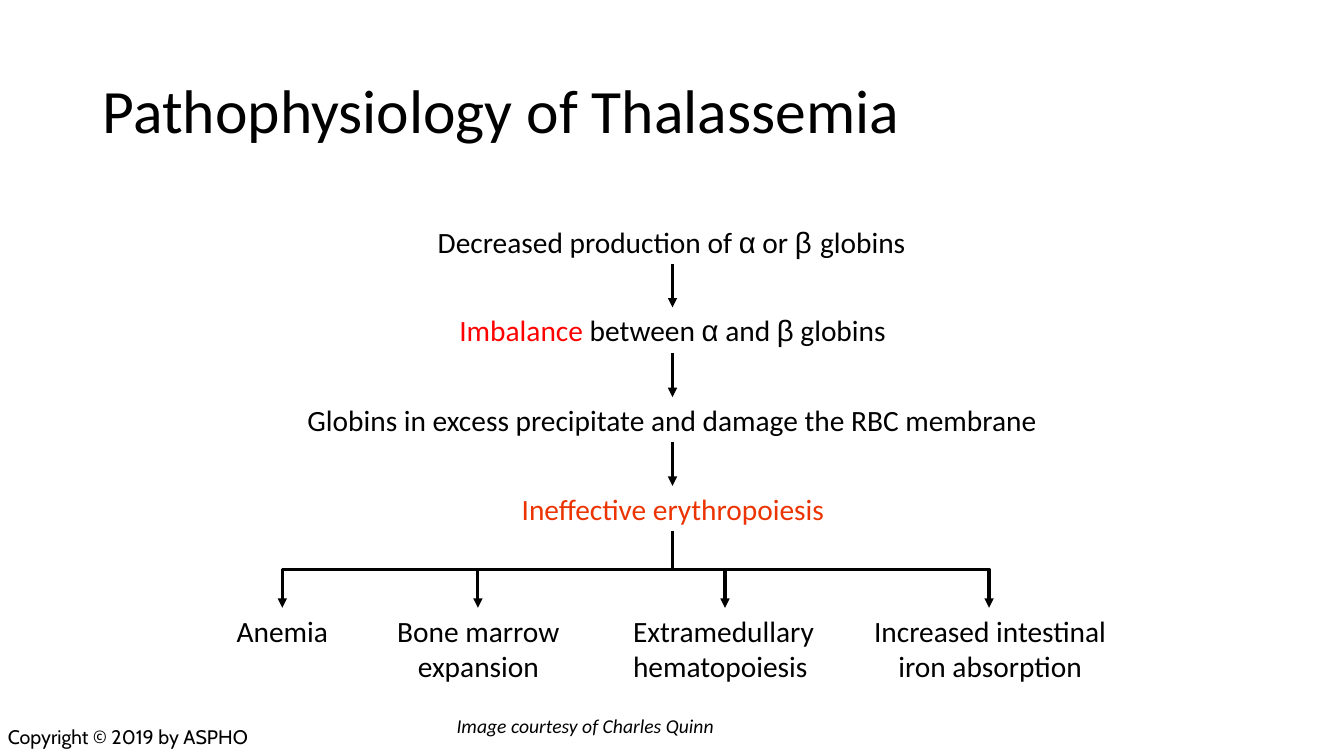
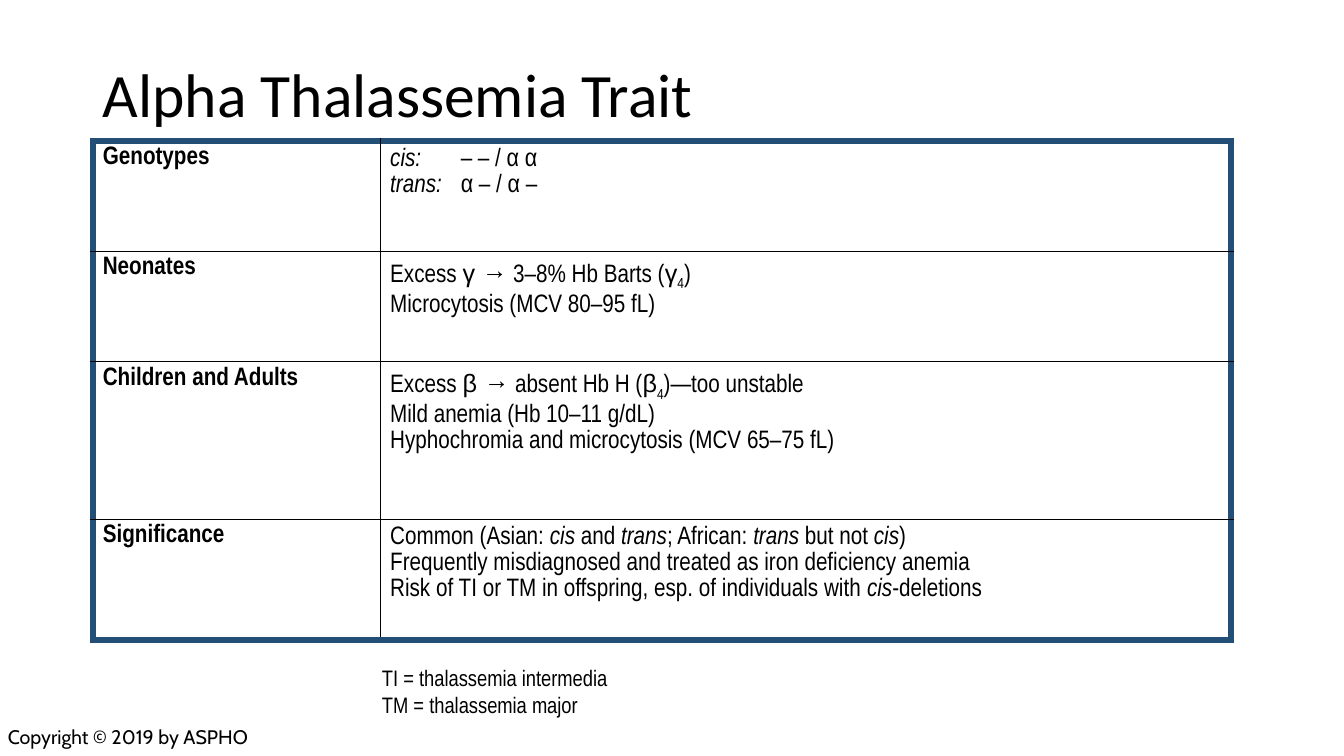
from dataclasses import dataclass
from typing import NamedTuple

from lxml import etree
from pptx import Presentation
from pptx.dml.color import RGBColor
from pptx.enum import shapes, text
from pptx.oxml import ns
from pptx.util import Inches, Pt

BLACK = "000000"
RED = "FF0000"
ORANGE = "EC3402"
NAVY = "234F77"
BODY_FONT = "Calibri"
GREEK_FONT = "Arial"
TABLE_FONT = "Arial Narrow"
FOOTER_FONT = "Cabin"
LEFT = text.PP_ALIGN.LEFT
CENTER = text.PP_ALIGN.CENTER
TRUNK_X = 6.67
FORK_TOP = 5.27
FORK_BOTTOM = 6.03


class Span(NamedTuple):
    text: str
    font: str | None = None
    color: str = BLACK
    bold: bool = False
    italic: bool = False
    baseline: int = 0


@dataclass
class Label:
    left: float
    top: float
    width: float
    height: float
    lines: list
    align: text.PP_ALIGN = CENTER
    wrap: bool = False


def greek(letter: str) -> Span:
    return Span(letter, GREEK_FONT)


def italic(words: str) -> Span:
    return Span(words, italic=True)


def subscript(words: str) -> Span:
    return Span(words, baseline=-25000)


STEPS = [
    Label(4.22, 2.17, 4.88, 0.45,
          [["Decreased production of ", greek("α"), " or ", greek("β "), "globins"]]),
    Label(4.43, 3.05, 4.48, 0.45,
          [[Span("Imbalance", color=RED), " between ", greek("α"), " and ",
            greek("β"), " globins"]]),
    Label(2.91, 3.94, 7.51, 0.45,
          [["Globins in excess precipitate and damage the RBC membrane"]]),
    Label(4.81, 4.82, 3.73, 0.45,
          [[Span("Ineffective erythropoiesis", color=ORANGE)]], wrap=True),
]
OUTCOMES = [
    Label(2.24, FORK_BOTTOM, 1.12, 0.45, [["Anemia"]]),
    Label(3.83, FORK_BOTTOM, 1.83, 0.81, [["Bone marrow"], ["expansion"]]),
    Label(6.18, FORK_BOTTOM, 2.02, 0.81, [["Extramedullary"], ["hematopoiesis"]], LEFT),
    Label(8.38, FORK_BOTTOM, 2.88, 0.8, [["Increased intestinal iron absorption"]], wrap=True),
]
BRANCH_XS = [2.8, 4.74, 7.19, 9.81]

COLUMN_WIDTHS = [2.85, 8.44]
ROW_HEIGHTS = [1.09, 1.1, 1.56, 1.2]
TRAIT_ROWS = [
    ("Genotypes", [[italic("cis:"), "\t– – / α α"], [italic("trans:"), "\tα – / α –"]]),
    ("Neonates", [
        ["Excess ", greek("γ "), "→ 3–8% Hb Barts (", greek("γ"), subscript("4"), ")"],
        ["Microcytosis (MCV 80–95 fL)"],
    ]),
    ("Children and Adults", [
        ["Excess ", greek("β "), "→ absent Hb H (", greek("β"), subscript("4"),
         ")—too unstable"],
        ["Mild anemia (Hb 10–11 g/dL)"],
        ["Hyphochromia and microcytosis (MCV 65–75 fL)"],
    ]),
    ("Significance", [
        ["Common (Asian: ", italic("cis"), " and ", italic("trans"), "; African: ",
         italic("trans"), " but not ", italic("cis"), ")"],
        ["Frequently misdiagnosed and treated as iron deficiency anemia"],
        ["Risk of TI or TM in offspring, esp. of individuals with ", italic("cis"),
         "-deletions"],
    ]),
]


def rgb(value: str) -> RGBColor:
    return RGBColor.from_string(value)


def add_child(parent, tag: str, **attributes):
    return etree.SubElement(parent, ns.qn(tag), attributes)


def write(frame, lines: list, *, size: float, font: str = BODY_FONT, align=LEFT,
          spacing: float | None = None, tab: float | None = None) -> None:
    for index, line in enumerate(lines):
        para = frame.add_paragraph() if index else frame.paragraphs[0]
        para.alignment = align
        if spacing:
            para.line_spacing = spacing
        if tab:
            stops = add_child(para._p.get_or_add_pPr(), "a:tabLst")
            add_child(stops, "a:tab", pos=str(Inches(tab)), algn="l")
        for item in line:
            span = item if isinstance(item, Span) else Span(item)
            run = para.add_run()
            run.text = span.text
            run.font.size = Pt(size)
            run.font.name = span.font or font
            run.font.color.rgb = rgb(span.color)
            run.font.bold = span.bold
            run.font.italic = span.italic
            if span.baseline:
                run._r.get_or_add_rPr().set("baseline", str(span.baseline))


def add_label(page, label: Label, *, size: float = 21, font: str = BODY_FONT) -> None:
    box = page.shapes.add_textbox(Inches(label.left), Inches(label.top),
                                  Inches(label.width), Inches(label.height))
    box.text_frame.word_wrap = label.wrap
    write(box.text_frame, label.lines, size=size, font=font, align=label.align)


def add_page(deck, title: str, *, title_height: float):
    page = deck.slides.add_slide(deck.slide_layouts.get_by_name("Title Only"))
    box = page.shapes.title
    box.left, box.top = Inches(0.92), Inches(0.4)
    box.width, box.height = Inches(11.5), Inches(title_height)
    frame = box.text_frame
    frame.auto_size = text.MSO_AUTO_SIZE.NONE
    frame.vertical_anchor = text.MSO_ANCHOR.MIDDLE
    write(frame, [[title]], size=44, spacing=0.9)
    footer = Label(-0.02, 7.14, 3.4, 0.34, [["Copyright © 2019 by ASPHO"]], LEFT, True)
    add_label(page, footer, size=14, font=FOOTER_FONT)
    return page


def add_arrow(page, kind, start: tuple[float, float], end: tuple[float, float]):
    arrow = page.shapes.add_connector(kind, *map(Inches, start + end))
    arrow.line.color.rgb = rgb(BLACK)
    arrow.line.width = Pt(2.25)
    properties = arrow.element.spPr
    add_child(properties.find(ns.qn("a:ln")), "a:tailEnd", type="triangle")
    add_child(properties, "a:effectLst")
    return arrow


def add_branch(page, target_x: float) -> None:
    drop = FORK_BOTTOM - FORK_TOP
    reach = abs(target_x - TRUNK_X)
    middle_x = (target_x + TRUNK_X) / 2
    middle_y = (FORK_TOP + FORK_BOTTOM) / 2
    side = 1 if target_x < TRUNK_X else -1
    branch = add_arrow(page, shapes.MSO_CONNECTOR.ELBOW,
                       (middle_x - side * drop / 2, middle_y - reach / 2),
                       (middle_x + side * drop / 2, middle_y + reach / 2))
    turn = 90 if side == 1 else 270
    branch.element.spPr.find(ns.qn("a:xfrm")).set("rot", str(turn * 60000))


def style_cell(cell, outer_sides: set[str]) -> None:
    properties = cell._tc.get_or_add_tcPr()
    for side in "LRTB":
        color, width = (NAVY, 4.5) if side in outer_sides else (BLACK, 0.75)
        border = add_child(properties, f"a:ln{side}", w=str(Pt(width)))
        add_child(add_child(border, "a:solidFill"), "a:srgbClr", val=color)
    cell.fill.background()


def add_trait_table(page) -> None:
    frame = page.shapes.add_table(len(TRAIT_ROWS), len(COLUMN_WIDTHS), Inches(0.92),
                                  Inches(1.4), Inches(sum(COLUMN_WIDTHS)),
                                  Inches(sum(ROW_HEIGHTS)))
    table = frame.table
    table.first_row = table.horz_banding = False
    for column, width in zip(table.columns, COLUMN_WIDTHS):
        column.width = Inches(width)
    for index, (heading, lines) in enumerate(TRAIT_ROWS):
        table.rows[index].height = Inches(ROW_HEIGHTS[index])
        edges = {"T"} if index == 0 else {"B"} if index == len(TRAIT_ROWS) - 1 else set()
        name, details = table.cell(index, 0), table.cell(index, 1)
        style_cell(name, edges | {"L"})
        style_cell(details, edges | {"R"})
        write(name.text_frame, [[Span(heading, bold=True)]], size=18, font=TABLE_FONT)
        write(details.text_frame, lines, size=18, font=TABLE_FONT, spacing=1.1,
              tab=0.7 if index == 0 else None)


def build_pathophysiology(deck) -> None:
    page = add_page(deck, "Pathophysiology of Thalassemia", title_height=1.45)
    for label in STEPS + OUTCOMES:
        add_label(page, label)
    for upper, lower in zip(STEPS, STEPS[1:]):
        add_arrow(page, shapes.MSO_CONNECTOR.STRAIGHT,
                  (TRUNK_X, upper.top + upper.height), (TRUNK_X, lower.top))
    for target_x in BRANCH_XS:
        add_branch(page, target_x)
    credit = Label(4.43, 7.03, 3.08, 0.34, [[italic("Image courtesy of Charles Quinn")]],
                   LEFT, True)
    add_label(page, credit, size=14)


def build_alpha_trait(deck) -> None:
    page = add_page(deck, "Alpha Thalassemia Trait", title_height=1.14)
    add_trait_table(page)
    key = Label(3.69, 6.54, 2.47, 0.64,
                [["TI = thalassemia intermedia"], ["TM = thalassemia major"]], LEFT)
    add_label(page, key, size=16, font=TABLE_FONT)


def main() -> None:
    deck = Presentation()
    deck.slide_width, deck.slide_height = Inches(13.33), Inches(7.5)
    build_pathophysiology(deck)
    build_alpha_trait(deck)
    deck.save("out.pptx")


if __name__ == "__main__":
    main()
